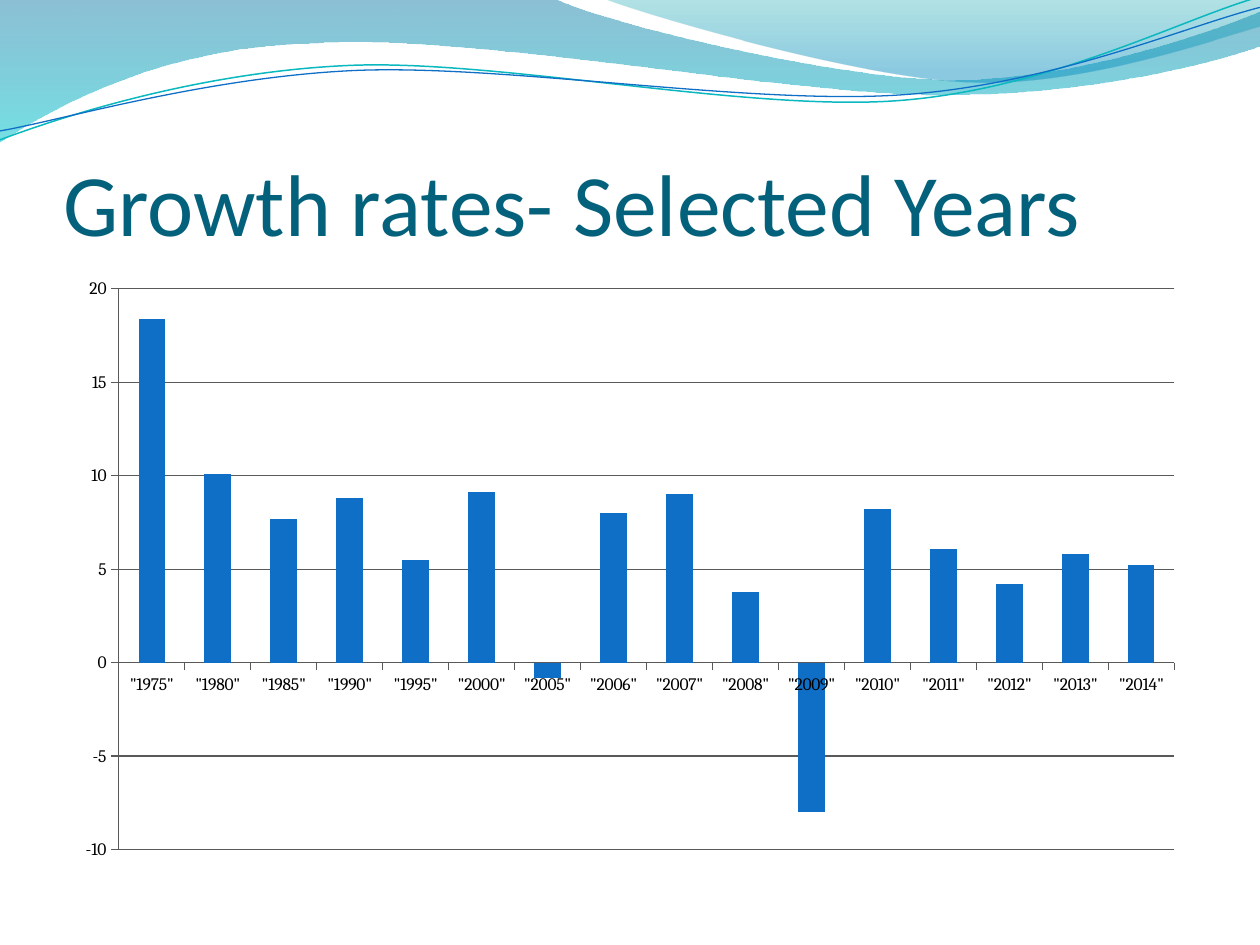
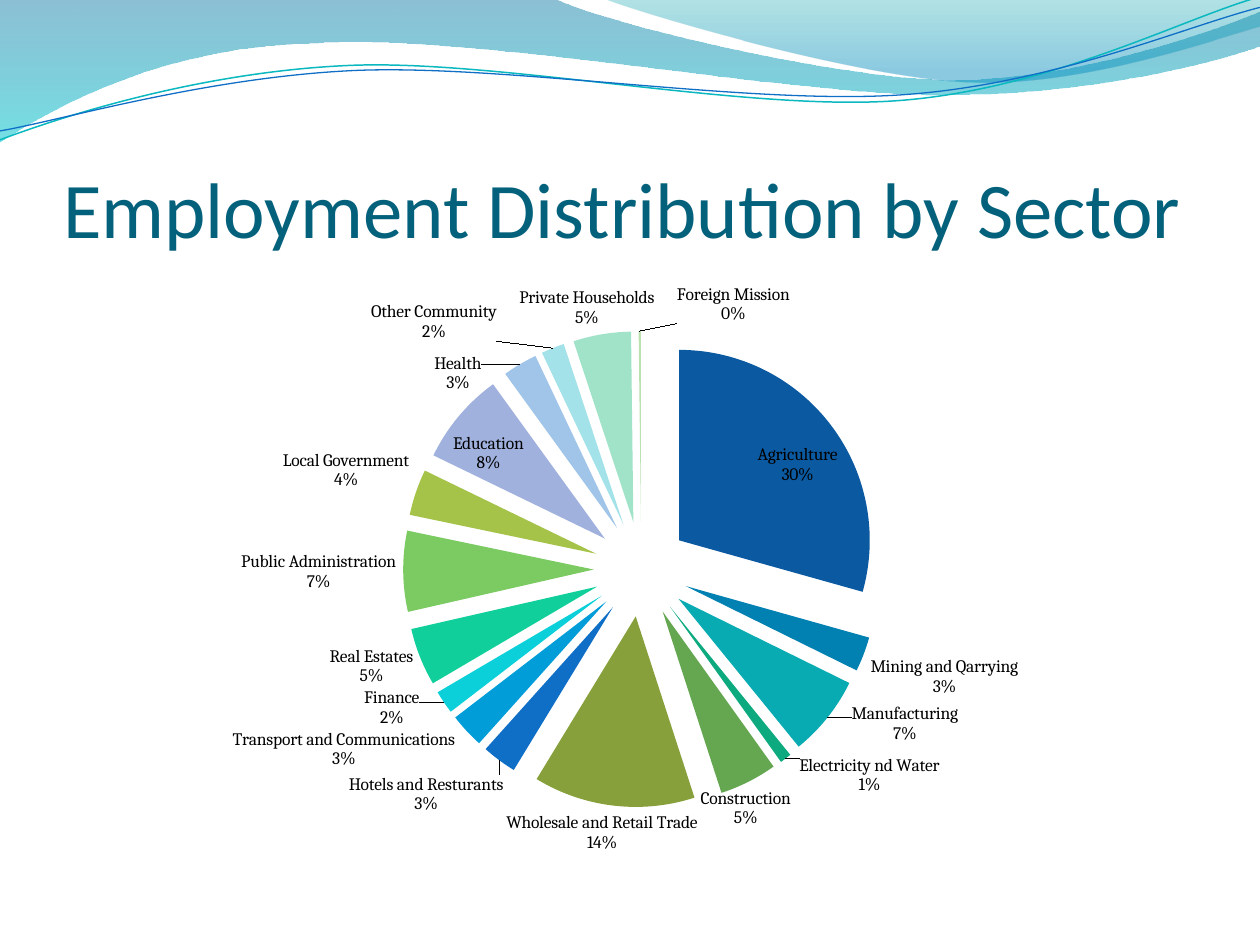
from lxml import etree
from pptx import Presentation
from pptx import util as u
from pptx.chart.data import CategoryChartData
from pptx.dml.color import RGBColor
from pptx.enum import chart as charts, text
from pptx.oxml.ns import qn

TITLE_COLOR = RGBColor(0x04, 0x61, 0x7B)
BLUE = RGBColor(0x0F, 0x6F, 0xC6)
TEAL = RGBColor(0x0A, 0xB8, 0xBF)
BLACK = RGBColor(0, 0, 0)
GRID_GREY = RGBColor(0x59, 0x59, 0x59)
WHITE = RGBColor(0xFF, 0xFF, 0xFF)
SLICE_COLORS = [RGBColor.from_string(code) for code in (
    "0B5AA1", "0081B2", "09ABB3", "0DAA7F", "65A751", "87A03B", "0F6FC6", "009DD9", "0BD0D9",
    "10CF9B", "7CCA62", "A5C249", "A0B1DD", "A0C5E8", "A2E2E8", "A1E3C8", "BBE1B0")]
TITLE_FONT, BODY_FONT = "Calibri", "Cambria"

# Outlines in cm: one point is a straight step, three points are a Bezier curve.
LEFT_BAND = [
    [(0, 0)], [(11.18, -0.03)],
    [(12.09, 0.43), (16.87, 1.6), (19.25, 1.6)],
    [(21.67, 1.6), (24.33, 0.66), (25.4, 0.23)],
    [(25.43, 0.91)],
    [(24.97, 1.12), (22.1, 1.93), (18.95, 1.91)],
    [(15.8, 1.91), (9.7, 0.71), (6.53, 0.86)],
    [(3.28, 0.91), (1.17, 2.11), (-0.03, 2.87)],
]
RIGHT_BAND = [
    [(12.17, -0.03)],
    [(12.93, 0.28), (17.32, 1.57), (19.53, 1.65)],
    [(21.74, 1.75), (24.41, 0.81), (25.4, 0.53)],
    [(25.4, 0)],
]
TEAL_WAVE = [
    [(0, 2.82)],
    [(1.22, 2.36), (4.01, 1.45), (7.04, 1.32)],
    [(10.03, 1.19), (15.06, 2.26), (18.11, 2.03)],
    [(21.16, 1.8), (23.83, 0.38), (25.35, -0.05)],
]
BLUE_WAVE = [
    [(0, 2.64)],
    [(1.19, 2.44), (4.17, 1.55), (7.19, 1.42)],
    [(10.24, 1.3), (15.16, 2.13), (18.21, 1.91)],
    [(21.23, 1.7), (23.9, 0.53), (25.4, 0.15)],
]

GROWTH_RATES = {
    1975: 18.4, 1980: 10.1, 1985: 7.7, 1990: 8.8, 1995: 5.5, 2000: 9.1, 2005: -0.8, 2006: 8,
    2007: 9, 2008: 3.8, 2009: -8, 2010: 8.2, 2011: 6.1, 2012: 4.2, 2013: 5.8, 2014: 5.2,
}
# Foreign Mission rounds to 0 % but still has a sliver and a label.
EMPLOYMENT = {
    "Agriculture": 30, "Mining and Qarrying": 3, "Manufacturing": 7, "Electricity nd Water": 1,
    "Construction": 5, "Wholesale and Retail Trade": 14, "Hotels and Resturants": 3,
    "Transport and Communications": 3, "Finance": 2, "Real Estates": 5,
    "Public Administration": 7, "Local Government": 4, "Education": 8, "Health": 3,
    "Other Community": 2, "Private Households": 5, "Foreign Mission": 0.2,
}


def draw_outline(slide, outline, close):
    """Build a freeform through all points, then join each three-point step into a curve."""
    start, *others = [(u.Cm(x), u.Cm(y)) for step in outline for x, y in step]
    builder = slide.shapes.build_freeform(*start)
    builder.add_line_segments(others, close=close)
    shape = builder.convert_to_shape()
    shape.shadow.inherit = False
    segments = iter(list(shape.element.iter(qn("a:lnTo"))))
    for step in outline[1:]:
        lines = [next(segments) for _ in step]
        if len(step) == 3:
            curve = etree.Element(qn("a:cubicBezTo"))
            lines[0].addprevious(curve)
            for line in lines:
                curve.append(line[0])
                line.getparent().remove(line)
    return shape


def add_band(slide, outline, stops):
    """Add a band filled from top to bottom; a stop is (position, colour, opacity in %)."""
    band = draw_outline(slide, outline, close=True)
    band.line.fill.background()
    band.fill.gradient()
    band.fill.gradient_angle = 270
    for stop, (position, color, _) in zip(band.fill.gradient_stops, stops):
        stop.position = position
        stop.color.rgb = RGBColor.from_string(color)
    for color, (_, _, opacity) in zip(band.element.iter(qn("a:srgbClr")), stops):
        etree.SubElement(color, qn("a:alpha")).set("val", str(opacity * 1000))
    return band


def add_wave(slide, outline, color, width):
    wave = draw_outline(slide, outline, close=False)
    wave.fill.background()
    wave.line.color.rgb = color
    wave.line.width = u.Pt(width)
    return wave


def decorate_master(deck, slide):
    """Draw the header on a slide, then move it to the master that all slides share."""
    master = deck.slide_master
    master.background.fill.solid()
    master.background.fill.fore_color.rgb = WHITE
    header = [
        add_band(slide, LEFT_BAND, [(0, "0074A1", 45), (1, "00C6CF", 55)]),
        add_band(slide, RIGHT_BAND, [(0, "00A1A9", 30), (0.8, "008BBF", 45)]),
        add_wave(slide, TEAL_WAVE, TEAL, 0.85),
        add_wave(slide, BLUE_WAVE, BLUE, 0.75),
    ]
    tree = master.element.cSld.spTree
    for place, shape in enumerate(header, start=2):
        tree.insert(place, shape.element)


def add_titled_slide(deck, title, size):
    slide = deck.slides.add_slide(deck.slide_layouts.get_by_name("Title Only"))
    box = slide.shapes.title
    box.left, box.top, box.width, box.height = map(u.Cm, (1.27, 1.94, 22.86, 3.18))
    frame = box.text_frame
    frame.auto_size = text.MSO_AUTO_SIZE.NONE
    frame.word_wrap = True
    frame.vertical_anchor = text.MSO_ANCHOR.BOTTOM
    frame.margin_left = frame.margin_right = frame.margin_bottom = 0
    frame.margin_top = u.Cm(0.13)
    para = frame.paragraphs[0]
    para.alignment = text.PP_ALIGN.LEFT
    span = para.add_run()
    span.text = title
    span.font.name, span.font.size = TITLE_FONT, u.Pt(size)
    span.font.color.rgb = TITLE_COLOR
    return slide


def set_plot_area(chart, x, y, w, h):
    """Fix the inner plot area, in fractions of the chart."""
    area = chart.element.find(".//" + qn("c:plotArea"))
    layout = area.find(qn("c:layout"))
    if layout is None:
        layout = etree.Element(qn("c:layout"))
        area.insert(0, layout)
    manual = etree.SubElement(layout, qn("c:manualLayout"))
    settings = {"layoutTarget": "inner", "xMode": "edge", "yMode": "edge",
                "x": x, "y": y, "w": w, "h": h}
    for name, value in settings.items():
        etree.SubElement(manual, qn("c:" + name)).set("val", str(value))


def add_chart(slide, kind, values):
    data = CategoryChartData()
    data.categories = list(values)
    data.add_series("Series 1", list(values.values()))
    chart = slide.shapes.add_chart(
        kind, *map(u.Cm, (1.27, 5.38, 22.86, 12.19)), data).chart
    chart.has_title = chart.has_legend = False
    chart.font.name, chart.font.size = BODY_FONT, u.Pt(10)
    chart.font.color.rgb = BLACK
    return chart


def style_line(line):
    line.color.rgb = GRID_GREY
    line.width = u.Pt(0.75)


def add_growth_chart(slide):
    rates = {f'"{year}"': rate for year, rate in GROWTH_RATES.items()}
    chart = add_chart(slide, charts.XL_CHART_TYPE.COLUMN_CLUSTERED, rates)
    plot = chart.plots[0]
    plot.gap_width = 150
    plot.vary_by_categories = False
    bars = plot.series[0]
    bars.invert_if_negative = False
    bars.format.fill.solid()
    bars.format.fill.fore_color.rgb = BLUE
    for axis in (chart.category_axis, chart.value_axis):
        axis.major_tick_mark = charts.XL_TICK_MARK.OUTSIDE
        axis.minor_tick_mark = charts.XL_TICK_MARK.NONE
        style_line(axis.format.line)
    scale = chart.value_axis
    scale.minimum_scale, scale.maximum_scale, scale.major_unit = -10, 20, 5
    scale.has_major_gridlines = True
    style_line(scale.major_gridlines.format.line)


def add_employment_chart(slide):
    chart = add_chart(slide, charts.XL_CHART_TYPE.PIE, EMPLOYMENT)
    set_plot_area(chart, 0.3, 0.1, 0.42, 0.8)
    plot = chart.plots[0]
    plot.vary_by_categories = True
    sectors = plot.series[0]
    for i, color in enumerate(SLICE_COLORS):
        fill = sectors.points[i].format.fill
        fill.solid()
        fill.fore_color.rgb = color
    explosion = etree.Element(qn("c:explosion"))
    explosion.set("val", "25")
    chart.element.find(".//" + qn("c:dPt")).addprevious(explosion)

    labels = sectors.data_labels
    labels.show_category_name = labels.show_value = True
    labels.show_percentage = False
    labels.number_format, labels.number_format_is_linked = '0"%"', False
    labels.position = charts.XL_LABEL_POSITION.BEST_FIT
    labels.font.name, labels.font.size = BODY_FONT, u.Pt(10)
    labels.font.color.rgb = BLACK
    settings = chart.element.find(".//" + qn("c:dLbls"))
    settings.find(".//" + qn("a:bodyPr")).set("wrap", "square")
    separator = etree.Element(qn("c:separator"))
    separator.text = "\n"
    settings.find(qn("c:showBubbleSize")).addnext(separator)


def main():
    deck = Presentation()
    deck.slide_width, deck.slide_height = u.Cm(25.4), u.Cm(19.05)
    growth = add_titled_slide(deck, "Growth rates- Selected Years", 50)
    decorate_master(deck, growth)
    add_growth_chart(growth)
    employment = add_titled_slide(deck, "Employment Distribution by Sector", 45)
    add_employment_chart(employment)
    deck.save("out.pptx")


if __name__ == "__main__":
    main()
